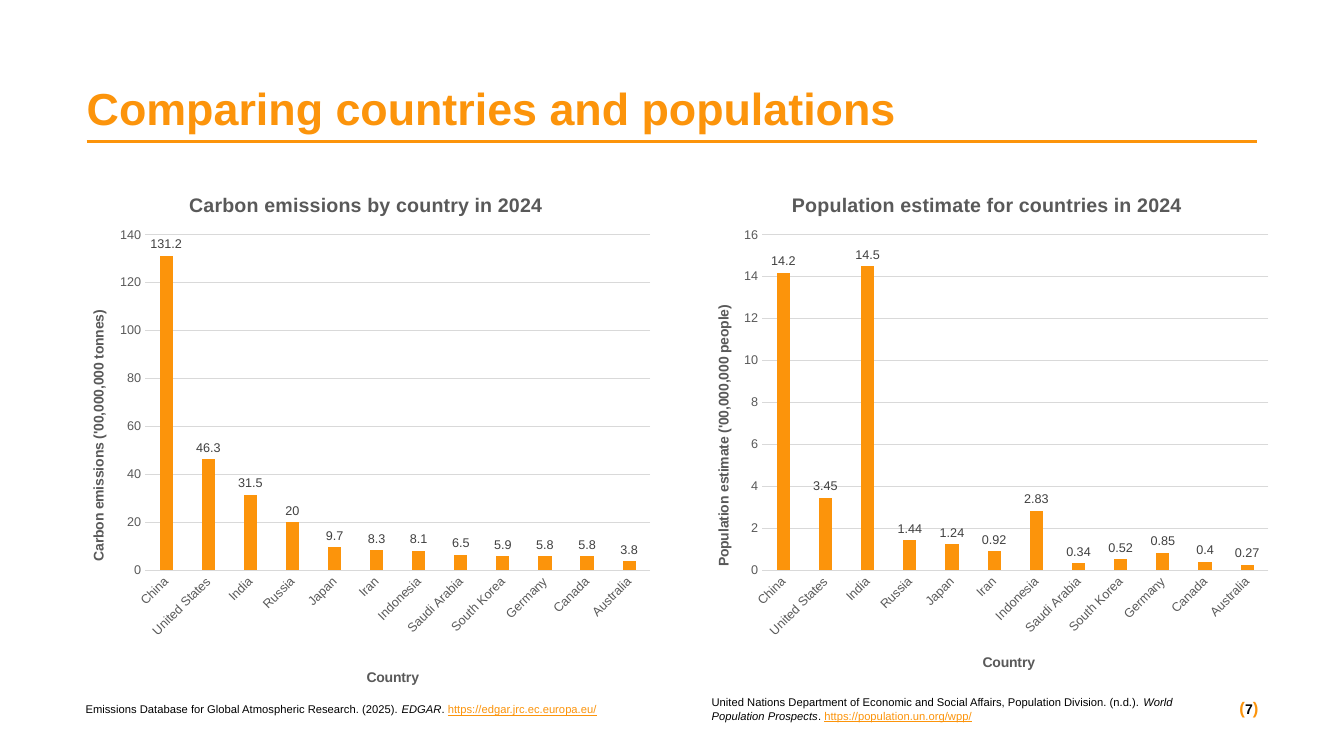
from lxml import etree
from pptx import Presentation
from pptx.chart.data import CategoryChartData
from pptx.dml.color import RGBColor
from pptx.enum import chart as ch, shapes, text as tx
from pptx.oxml import parse_xml
from pptx.oxml.ns import nsdecls, qn
from pptx.util import Inches, Pt

FONT = "Arial"
ORANGE, BLACK, GREY, DARK, PALE = "FC940B", "000000", "595959", "404040", "D9D9D9"

TITLE = "Comparing countries and populations"
LANDS = ["China", "United States", "India", "Russia", "Japan", "Iran", "Indonesia",
         "Saudi Arabia", "South Korea", "Germany", "Canada", "Australia"]
# Places are slide inches: box and plot are left, top, width, height.
CHARTS = [
    dict(title="Carbon emissions by country in 2024",
         axis="Carbon emissions ('00,000,000 tonnes)",
         vals=[131.2, 46.3, 31.5, 20, 9.7, 8.3, 8.1, 6.5, 5.9, 5.8, 5.8, 3.8],
         top=140, step=20,
         box=(0.63, 1.67, 5.93, 5.18), plot=(1.44, 2.33, 5.01, 3.33),
         spots=[(1.84, 1.87), (3.61, 6.6), (0.86, 3.05)]),
    dict(title="Population estimate for countries in 2024",
         axis="Population estimate ('00,000,000 people)",
         vals=[14.2, 3.45, 14.5, 1.44, 1.24, 0.92, 2.83, 0.34, 0.52, 0.85, 0.4, 0.27],
         top=16, step=2,
         box=(6.83, 1.67, 5.87, 5.18), plot=(7.56, 2.33, 5.02, 3.33),
         spots=[(7.82, 1.87), (9.72, 6.46), (7.06, 3.0)]),
]
SOURCES = [
    ((0.75, 6.92, 5.35, 0.24),
     "Emissions Database for Global Atmospheric Research. (2025). ",
     "EDGAR", "https://edgar.jrc.ec.europa.eu/"),
    ((6.96, 6.85, 4.91, 0.37),
     "United Nations Department of Economic and Social Affairs, Population Division. (n.d.). ",
     "World Population Prospects", "https://population.un.org/wpp/"),
]


def rgb(code):
    return RGBColor.from_string(code)


def style(font, size, color, bold=False, italic=False, line=False):
    font.name, font.size, font.bold = FONT, Pt(size), bold
    font.italic, font.underline = italic, line
    font.color.rgb = rgb(color)


def write(slide, box, runs, align=tx.PP_ALIGN.LEFT, anchor=tx.MSO_ANCHOR.TOP, inset=None):
    """Add a text box; each run is a text and its format."""
    frame = slide.shapes.add_textbox(*map(Inches, box)).text_frame
    frame.word_wrap, frame.vertical_anchor = True, anchor
    if inset is not None:
        frame.margin_left = frame.margin_right = Inches(inset)
        frame.margin_top = frame.margin_bottom = Inches(inset)
    para = frame.paragraphs[0]
    para.alignment = align
    for words, form in runs:
        run = para.add_run()
        run.text = words
        style(run.font, **form)


def place(node, box, spot, size=None):
    """Set a manual layout, turning slide inches into chart fractions."""
    left, top, wide, high = box
    parts = [("xMode", "edge"), ("yMode", "edge")]
    if size:
        parts.insert(0, ("layoutTarget", "inner"))
    parts += [("x", (spot[0] - left) / wide), ("y", (spot[1] - top) / high)]
    if size:
        parts += [("w", size[0] / wide), ("h", size[1] / high)]
    for old in node.findall(qn("c:layout")):
        node.remove(old)
    layout = parse_xml(f"<c:layout {nsdecls('c')}/>")
    manual = etree.SubElement(layout, qn("c:manualLayout"))
    for tag, val in parts:
        etree.SubElement(manual, qn("c:" + tag)).set("val", str(val))
    text = node.find(qn("c:tx"))
    if text is None:
        node.insert(0, layout)
    else:
        text.addnext(layout)


def label(owner, words, size, box, spot):
    """Give a chart or an axis its title."""
    head = owner.chart_title if hasattr(owner, "chart_title") else owner.axis_title
    run = head.text_frame.paragraphs[0].add_run()
    run.text = words
    style(run.font, size, GREY, bold=True)
    place(head._element, box, spot)
    return head


def draw(slide, title, axis, vals, top, step, box, plot, spots):
    data = CategoryChartData()
    data.categories = LANDS
    data.add_series("Series 1", vals)
    chart = slide.shapes.add_chart(
        ch.XL_CHART_TYPE.COLUMN_CLUSTERED, *map(Inches, box), data).chart
    style(chart.font, 10, BLACK)
    chart.has_legend = False
    chart.has_title = True
    label(chart, title, 14, box, spots[0])
    chart.chart_title.include_in_layout = False

    cat, val = chart.category_axis, chart.value_axis
    for each in (cat, val):
        each.major_tick_mark = each.minor_tick_mark = ch.XL_TICK_MARK.NONE
        style(each.tick_labels.font, 9, GREY)
    label(cat, "Country", 10, box, spots[1])
    side = label(val, axis, 10, box, spots[2])
    side.text_frame._txBody.bodyPr.set("rot", "-5400000")
    cat._element.find(qn("c:txPr")).find(qn("a:bodyPr")).set("rot", "-2700000")
    val.minimum_scale, val.maximum_scale, val.major_unit = 0, top, step
    val.format.line.fill.background()
    val.has_major_gridlines = True
    for line in (cat.format.line, val.major_gridlines.format.line):
        line.color.rgb, line.width = rgb(PALE), Pt(0.75)

    bars = chart.plots[0]
    bars.gap_width, bars.overlap, bars.vary_by_categories = 219, -27, False
    fill = bars.series[0].format.fill
    fill.solid()
    fill.fore_color.rgb = rgb(ORANGE)
    bars.has_data_labels = True
    tags = bars.data_labels
    tags.show_value, tags.position = True, ch.XL_LABEL_POSITION.OUTSIDE_END
    tags.number_format, tags.number_format_is_linked = "General", False
    style(tags.font, 9, DARK)
    place(chart._chartSpace.chart.plotArea, box, plot[:2], plot[2:])


def main():
    deck = Presentation()
    deck.slide_width, deck.slide_height = Inches(13.33), Inches(7.5)
    slide = deck.slides.add_slide(deck.slide_layouts[6])

    rule = slide.shapes.add_connector(
        shapes.MSO_CONNECTOR.STRAIGHT, *map(Inches, (0.86, 1.4, 12.47, 1.4)))
    rule.line.color.rgb, rule.line.width = rgb(ORANGE), Pt(2)
    etree.SubElement(rule._element.spPr, qn("a:effectLst"))

    write(slide, (0.86, 0.78, 11.61, 0.58),
          [(TITLE, dict(size=32, color=ORANGE, bold=True))],
          anchor=tx.MSO_ANCHOR.MIDDLE, inset=0)
    brace = dict(size=12, color=ORANGE, bold=True)
    write(slide, (11.69, 6.85, 0.79, 0.34),
          [("(", brace), ("7", dict(size=10, color=BLACK, bold=True)), (")", brace)],
          tx.PP_ALIGN.RIGHT, tx.MSO_ANCHOR.MIDDLE, 0)
    for item in CHARTS:
        draw(slide, **item)
    plain = dict(size=8, color=BLACK)
    for box, lead, work, link in SOURCES:
        write(slide, box, [(lead, plain), (work, dict(plain, italic=True)), (". ", plain),
                           (link, dict(size=8, color=ORANGE, line=True))])
    deck.save("out.pptx")


if __name__ == "__main__":
    main()
